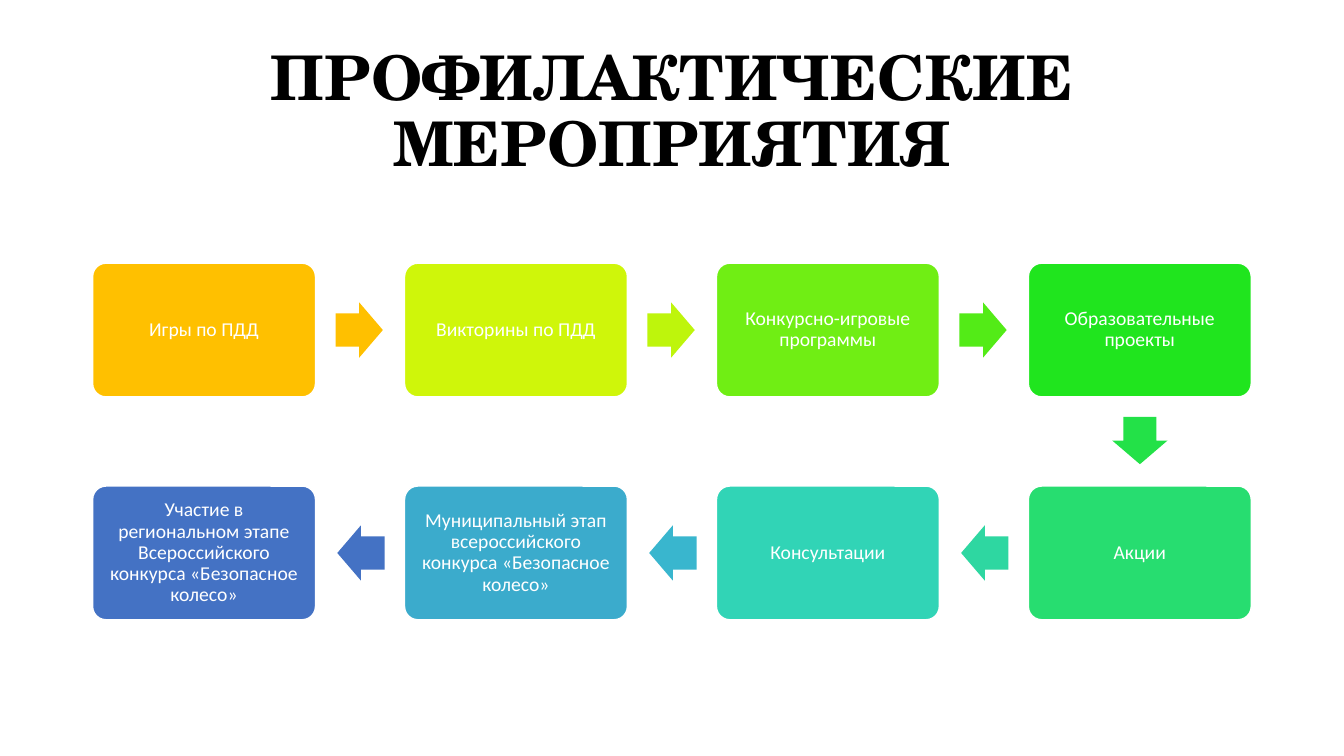
import math
from dataclasses import dataclass

import pptx
import pptx.dml.color
import pptx.enum.shapes
import pptx.enum.text
import pptx.util

Pt = pptx.util.Pt
Shape = pptx.enum.shapes.MSO_SHAPE


@dataclass(frozen=True)
class Theme:
    """Colours, fonts and type sizes of the slide."""
    title_font: str = "TeX Gyre Schola"
    body_font: str = "Calibri"
    title_size: int = 44
    body_size: int = 14
    title_color: str = "000000"
    light: str = "FFFFFF"
    steps: tuple = ("FFC000", "CFF60A", "70EE14", "20E51E",
                    "27DD70", "31D4B6", "3BABCC", "4472C4")
    arrows: tuple = ("FFC000", "BEF50C", "53EB17", "23E148",
                     "2ED7A1", "39B6CE", "4472C4")


THEME = Theme()
STEPS = (
    "Игры по ПДД",
    "Викторины по ПДД",
    "Конкурсно-игровые программы",
    "Образовательные проекты",
    "Акции",
    "Консультации",
    "Муниципальный этап всероссийского конкурса «Безопасное колесо»",
    "Участие в региональном этапе Всероссийского конкурса «Безопасное колесо»",
)
COLUMNS = 4
LEFT, TOP = 66.2, 188
STEP_WIDTH, STEP_HEIGHT = 159.2, 95.5
COLUMN_PITCH, ROW_PITCH = 222.8, 159.2
ARROW_LENGTH, ARROW_WIDTH = 33.8, 39.5
ARROW_OFFSET = 31.2


def rgb(color):
    """Turn a hex string into a colour."""
    return pptx.dml.color.RGBColor.from_string(color)


def set_text(shape, text, font, size, color, bold=False):
    """Write one centred paragraph in the middle of a shape."""
    frame = shape.text_frame
    frame.text = text
    frame.word_wrap = True
    frame.auto_size = pptx.enum.text.MSO_AUTO_SIZE.NONE
    frame.vertical_anchor = pptx.enum.text.MSO_ANCHOR.MIDDLE
    para = frame.paragraphs[0]
    para.alignment = pptx.enum.text.PP_ALIGN.CENTER
    para.line_spacing = 0.9
    span = para.runs[0]
    span.font.name = font
    span.font.size = Pt(size)
    span.font.bold = bold
    span.font.color.rgb = rgb(color)


def add_title(page, text):
    """Place and format the slide title."""
    title = page.shapes.title
    title.left, title.top = Pt(LEFT), Pt(28.8)
    title.width, title.height = Pt(828), Pt(104.4)
    set_text(title, text, THEME.title_font, THEME.title_size, THEME.title_color, True)


def add_filled(page, kind, center, width, height, color):
    """Add a filled preset shape around a centre point."""
    shape = page.shapes.add_shape(
        kind, Pt(center[0] - width / 2), Pt(center[1] - height / 2),
        Pt(width), Pt(height))
    shape.shadow.inherit = False
    shape.fill.solid()
    shape.fill.fore_color.rgb = rgb(color)
    return shape


def add_step(page, center, text, color):
    """Add a rounded box with the name of an activity."""
    box = add_filled(page, Shape.ROUNDED_RECTANGLE, center,
                     STEP_WIDTH, STEP_HEIGHT, color)
    box.adjustments[0] = 0.1
    box.line.color.rgb = rgb(THEME.light)
    box.line.width = Pt(1)
    frame = box.text_frame
    frame.margin_left = frame.margin_right = Pt(4.2)
    frame.margin_top = frame.margin_bottom = Pt(4.2)
    set_text(box, text, THEME.body_font, THEME.body_size, THEME.light)


def add_arrow(page, start, end, color):
    """Add a block arrow just past one step, turned towards the next."""
    angle = math.atan2(end[1] - start[1], end[0] - start[0])
    across, down = math.cos(angle), math.sin(angle)
    center = (start[0] + across * (STEP_WIDTH / 2 + ARROW_OFFSET),
              start[1] + down * (STEP_HEIGHT / 2 + ARROW_OFFSET))
    arrow = add_filled(page, Shape.RIGHT_ARROW, center,
                       ARROW_LENGTH, ARROW_WIDTH, color)
    arrow.rotation = round(math.degrees(angle))
    arrow.adjustments[0] = 0.6
    arrow.adjustments[1] = 0.5
    arrow.line.fill.background()


def step_center(index):
    """Find the centre of a step on the path that turns back at each row end."""
    row, column = divmod(index, COLUMNS)
    if row % 2:
        column = COLUMNS - 1 - column
    return (LEFT + column * COLUMN_PITCH + STEP_WIDTH / 2,
            TOP + row * ROW_PITCH + STEP_HEIGHT / 2)


def main():
    """Build and save the slide."""
    deck = pptx.Presentation()
    deck.slide_width, deck.slide_height = Pt(960), Pt(540)
    page = deck.slides.add_slide(deck.slide_layouts.get_by_name("Title Only"))
    add_title(page, "ПРОФИЛАКТИЧЕСКИЕ МЕРОПРИЯТИЯ")
    centers = [step_center(index) for index in range(len(STEPS))]
    for center, text, color in zip(centers, STEPS, THEME.steps):
        add_step(page, center, text, color)
    for start, end, color in zip(centers, centers[1:], THEME.arrows):
        add_arrow(page, start, end, color)
    deck.save("out.pptx")


if __name__ == "__main__":
    main()
